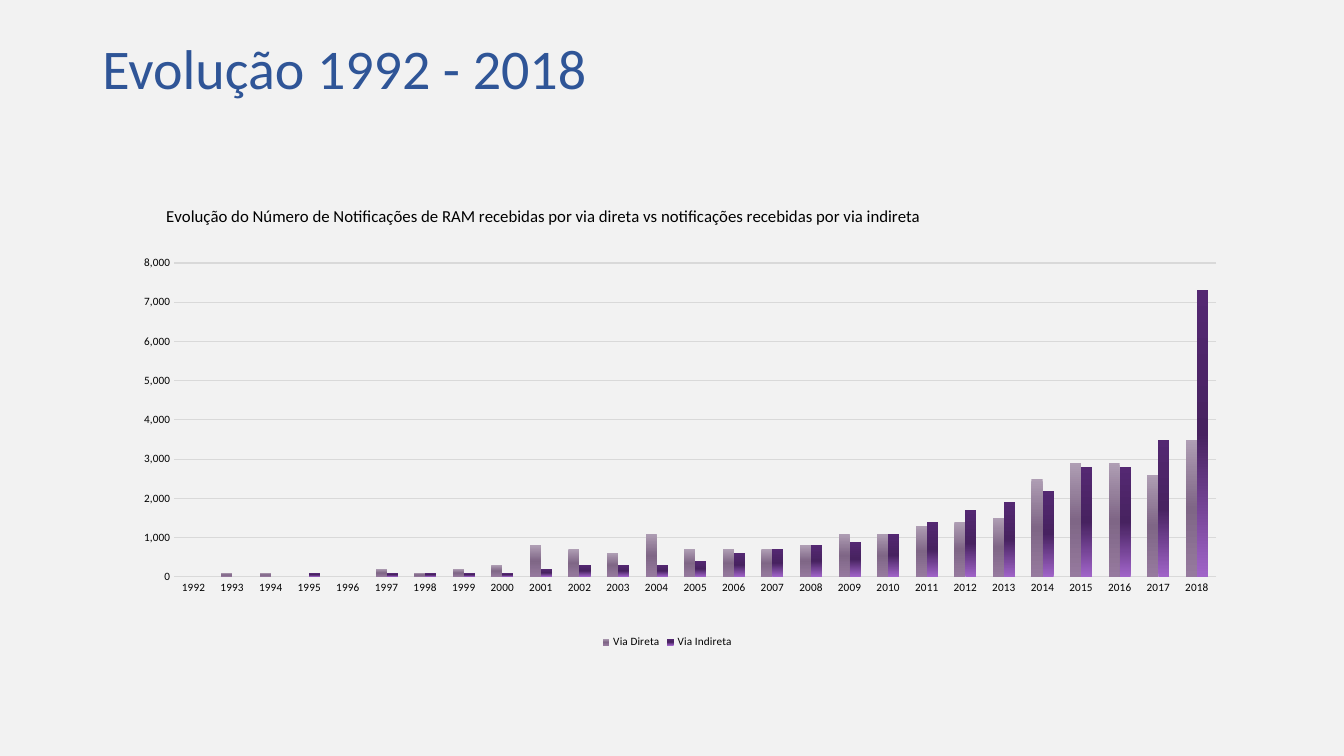
"""Build a slide charting direct and indirect notifications from 1992 to 2018."""
from dataclasses import dataclass

from pptx import Presentation
from pptx.chart.data import CategoryChartData
from pptx.dml.color import RGBColor
from pptx.enum.chart import XL_CHART_TYPE, XL_LEGEND_POSITION, XL_TICK_MARK
from pptx.enum.text import MSO_ANCHOR, MSO_AUTO_SIZE, PP_ALIGN
from pptx.oxml import parse_xml
from pptx.oxml.ns import nsdecls, qn
from pptx.util import Emu, Pt

COLUMNS = XL_CHART_TYPE.COLUMN_CLUSTERED
BOTTOM = XL_LEGEND_POSITION.BOTTOM
NO_TICK = XL_TICK_MARK.NONE
MIDDLE = MSO_ANCHOR.MIDDLE
NO_FIT = MSO_AUTO_SIZE.NONE
LEFT = PP_ALIGN.LEFT
PX = 9525


@dataclass(frozen=True)
class Theme:
    font: str = "Calibri"
    background: str = "F2F2F2"
    title: str = "2F5597"
    text: str = "000000"
    grid: str = "D9D9D9"
    title_size: int = 40
    chart_title_size: int = 12
    chart_size: int = 10
    label_size: int = 8


@dataclass(frozen=True)
class Box:
    x: int
    y: int
    w: int
    h: int

    def emu(self) -> tuple[Emu, ...]:
        return tuple(Emu(n * PX) for n in (self.x, self.y, self.w, self.h))


@dataclass(frozen=True)
class Series:
    name: str
    values: tuple[int, ...]
    colors: tuple[str, str, str]
    angle: int


THEME = Theme()
TITLE_BOX = Box(88, 38, 695, 60)
CHART_BOX = Box(102, 169, 1067, 453)
YEARS = range(1992, 2019)
CHART_TITLE = ("Evolução do Número de Notificações de RAM recebidas por via direta "
               "vs notificações recebidas por via indireta")
SERIES = (
    Series("Via Direta",
           (0, 100, 100, 0, 0, 200, 100, 200, 300, 800, 700, 600, 1100, 700,
            700, 700, 800, 1100, 1100, 1300, 1400, 1500, 2500, 2900, 2900, 2600, 3500),
           ("AF9EB4", "7F6686", "967A9E"), 90),
    Series("Via Indireta",
           (0, 0, 0, 100, 0, 100, 100, 100, 100, 200, 300, 300, 300, 400,
            600, 700, 800, 900, 1100, 1400, 1700, 1900, 2200, 2800, 2800, 3500, 7300),
           ("A064C8", "472260", "542872"), 270),
)


def style_font(font, *, size: int, color: str = THEME.text) -> None:
    font.name = THEME.font
    font.size = Pt(size)
    font.bold = False
    font.color.rgb = RGBColor.from_string(color)


def write_text(tf, text: str, **style) -> None:
    p = tf.paragraphs[0]
    p.alignment = LEFT
    r = p.add_run()
    r.text = text
    style_font(r.font, **style)


def set_layout(parent, index: int, target: str = "", **fractions: float) -> None:
    for old in parent.findall(qn("c:layout")):
        parent.remove(old)
    inner = f'<c:layoutTarget val="{target}"/>' if target else ""
    inner += '<c:xMode val="edge"/><c:yMode val="edge"/>'
    inner += "".join(f'<c:{key} val="{val}"/>' for key, val in fractions.items())
    parent.insert(index, parse_xml(
        f'<c:layout {nsdecls("c")}><c:manualLayout>{inner}</c:manualLayout></c:layout>'))


def fill_gradient(sp_pr, colors: tuple[str, ...], angle: int) -> None:
    stops = "".join(f'<a:gs pos="{i * 50000}"><a:srgbClr val="{c}"/></a:gs>'
                    for i, c in enumerate(colors))
    sp_pr.insert(0, parse_xml(
        f'<a:gradFill {nsdecls("a")} rotWithShape="1"><a:gsLst>{stops}</a:gsLst>'
        f'<a:lin ang="{angle * 60000}" scaled="0"/></a:gradFill>'))


def add_title(slide, text: str) -> None:
    sp = slide.shapes.title
    sp.left, sp.top, sp.width, sp.height = TITLE_BOX.emu()
    tf = sp.text_frame
    tf.word_wrap = True
    tf.auto_size = NO_FIT
    tf.vertical_anchor = MIDDLE
    tf.paragraphs[0].line_spacing = 0.9
    write_text(tf, text, size=THEME.title_size, color=THEME.title)


def style_axes(chart) -> None:
    for axis in (chart.category_axis, chart.value_axis):
        axis.major_tick_mark = axis.minor_tick_mark = NO_TICK
        axis.format.line.fill.background()
        style_font(axis.tick_labels.font, size=THEME.label_size)
    axis = chart.value_axis
    axis.minimum_scale, axis.maximum_scale, axis.major_unit = 0, 8000, 1000
    axis.tick_labels.number_format = "#,##0"
    axis.tick_labels.number_format_is_linked = False
    line = axis.major_gridlines.format.line
    line.width = Pt(0.75)
    line.color.rgb = RGBColor.from_string(THEME.grid)


def add_column_chart(slide) -> None:
    data = CategoryChartData(number_format="#,##0")
    data.categories = [str(year) for year in YEARS]
    for s in SERIES:
        data.add_series(s.name, s.values)
    chart = slide.shapes.add_chart(COLUMNS, *CHART_BOX.emu(), data).chart
    style_font(chart.font, size=THEME.chart_size)

    title = chart.chart_title
    write_text(title.text_frame, CHART_TITLE, size=THEME.chart_title_size)
    title_xml = chart._chartSpace.chart.find(qn("c:title"))
    set_layout(title_xml, 1, x=0.05, y=0.05)

    chart.has_legend = True
    chart.legend.position = BOTTOM
    chart.legend.include_in_layout = False
    style_font(chart.legend.font, size=THEME.label_size)
    style_axes(chart)

    plot = chart.plots[0]
    plot.gap_width, plot.overlap, plot.vary_by_categories = 150, 0, False
    set_layout(chart._chartSpace.chart.plotArea, 0, "inner",
               x=0.06, y=0.18, w=0.93, h=0.66)
    for s, bars in zip(SERIES, plot.series):
        bars.invert_if_negative = False
        fill_gradient(bars._element.get_or_add_spPr(), s.colors, s.angle)


def main() -> None:
    prs = Presentation()
    prs.slide_width, prs.slide_height = Emu(1280 * PX), Emu(720 * PX)
    slide = prs.slides.add_slide(prs.slide_layouts[5])
    fill = slide.background.fill
    fill.solid()
    fill.fore_color.rgb = RGBColor.from_string(THEME.background)
    add_title(slide, "Evolução 1992 - 2018")
    add_column_chart(slide)
    prs.save("out.pptx")


if __name__ == "__main__":
    main()
